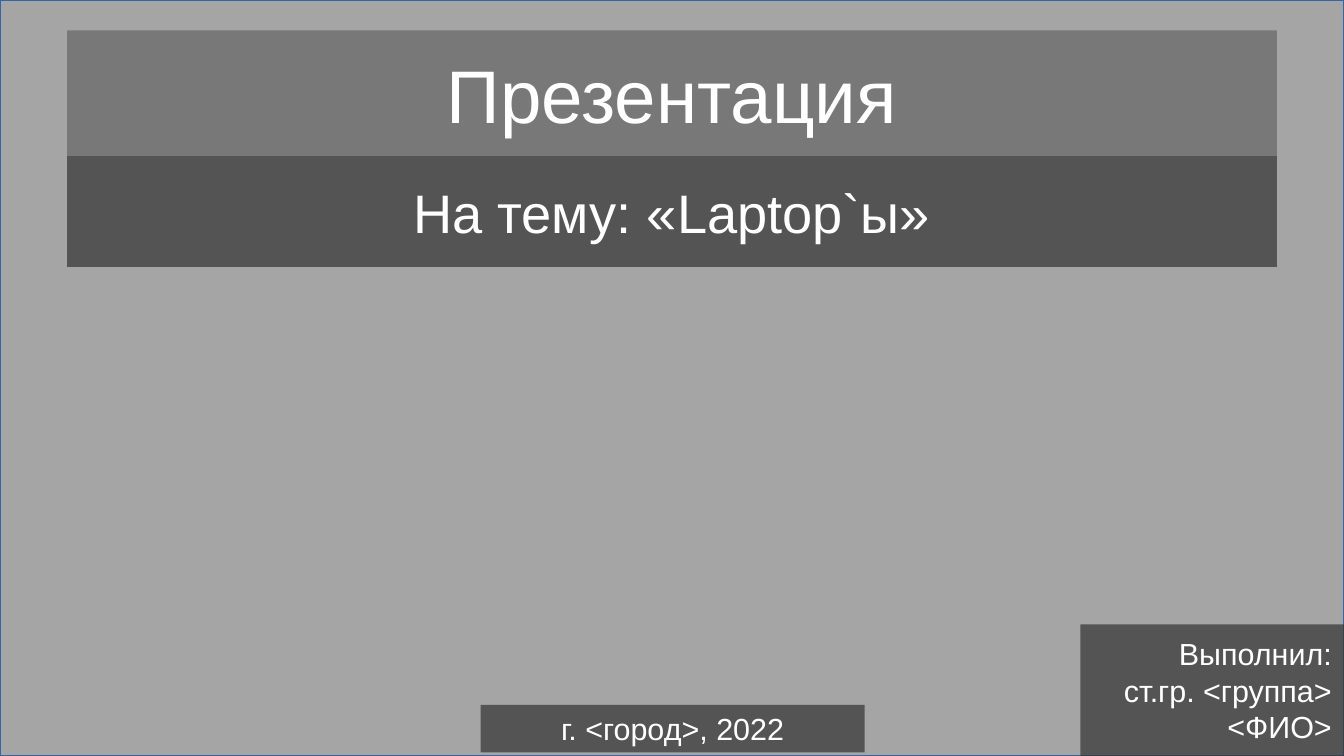
from lxml.etree import SubElement
from pptx import Presentation
from pptx.dml.color import RGBColor
from pptx.enum.shapes import MSO_SHAPE
from pptx.enum.text import MSO_ANCHOR, MSO_AUTO_SIZE, PP_ALIGN
from pptx.oxml.ns import qn
from pptx.util import Inches, Pt

WIDTH, HEIGHT = 11.02, 6.2
DARK = "333333"


def rgb(color):
    """Return the colour for a hex string."""
    return RGBColor.from_string(color)


def fill_clear(sp, color, alpha=70):
    """Fill a shape with a colour at the given opacity in percent."""
    sp.fill.solid()
    sp.fill.fore_color.rgb = rgb(color)
    clr = sp._element.spPr.find(qn("a:solidFill"))[0]
    SubElement(clr, qn("a:alpha"), val=str(alpha * 1000))


def add_rect(s, x, y, w, h):
    """Add a rectangle without shadow or outline."""
    sp = s.shapes.add_shape(MSO_SHAPE.RECTANGLE, Inches(x), Inches(y), Inches(w), Inches(h))
    sp.shadow.inherit = False
    sp.line.fill.background()
    return sp


def write(sp, lines, size, align=PP_ALIGN.CENTER, inset=(0, 0)):
    """Write white lines of text into a shape, centred vertically."""
    tf = sp.text_frame
    tf.word_wrap = True
    tf.auto_size = MSO_AUTO_SIZE.NONE
    tf.vertical_anchor = MSO_ANCHOR.MIDDLE
    tf.margin_left = tf.margin_right = Inches(inset[0])
    tf.margin_top = tf.margin_bottom = Inches(inset[1])
    tf.text = "\n".join(lines)
    for p in tf.paragraphs:
        p.alignment = align
        p.space_before = Pt(0)
        p.font.name = "Arial"
        p.font.size = Pt(size)
        p.font.color.rgb = rgb("FFFFFF")


def add_backdrop(s, x, y, w, h):
    """Lay a grey sheet with a thin blue outline behind everything."""
    sp = add_rect(s, x, y, w, h)
    fill_clear(sp, "808080")
    sp.line.color.rgb = rgb("3465A4")
    sp.line.width = Pt(0)
    s.shapes._spTree.insert(2, sp._element)


def add_heading(s, x, y, w, title_h, subtitle_h):
    """Stack the title band on the subtitle band."""
    title = s.shapes.title
    title.left, title.top = Inches(x), Inches(y)
    title.width, title.height = Inches(w), Inches(title_h)
    fill_clear(title, "666666")
    write(title, ["Презентация"], 44)
    subtitle = add_rect(s, x, y + title_h, w, subtitle_h)
    fill_clear(subtitle, DARK)
    write(subtitle, ["На тему: «Laptop`ы»"], 32)


def add_label(s, x, y, w, h, lines, align):
    """Add a dark label with small text."""
    sp = add_rect(s, x, y, w, h)
    fill_clear(sp, DARK)
    write(sp, lines, 18, align, (0.1, 0.05))


def main():
    """Build the cover slide."""
    prs = Presentation()
    prs.slide_width, prs.slide_height = Inches(WIDTH), Inches(HEIGHT)
    s = prs.slides.add_slide(prs.slide_layouts[5])
    add_backdrop(s, 0, 0, WIDTH, HEIGHT)
    add_heading(s, 0.55, 0.25, WIDTH - 2 * 0.55, 1.03, 0.91)
    add_label(s, WIDTH - 2.16, HEIGHT - 1.08, 2.16, 1.08,
              ["Выполнил:", "ст.гр. <группа>", "<ФИО>"], PP_ALIGN.RIGHT)
    add_label(s, 3.94, 5.78, 3.15, 0.39, ["г. <город>, 2022"], PP_ALIGN.CENTER)
    prs.save("out.pptx")


if __name__ == "__main__":
    main()
